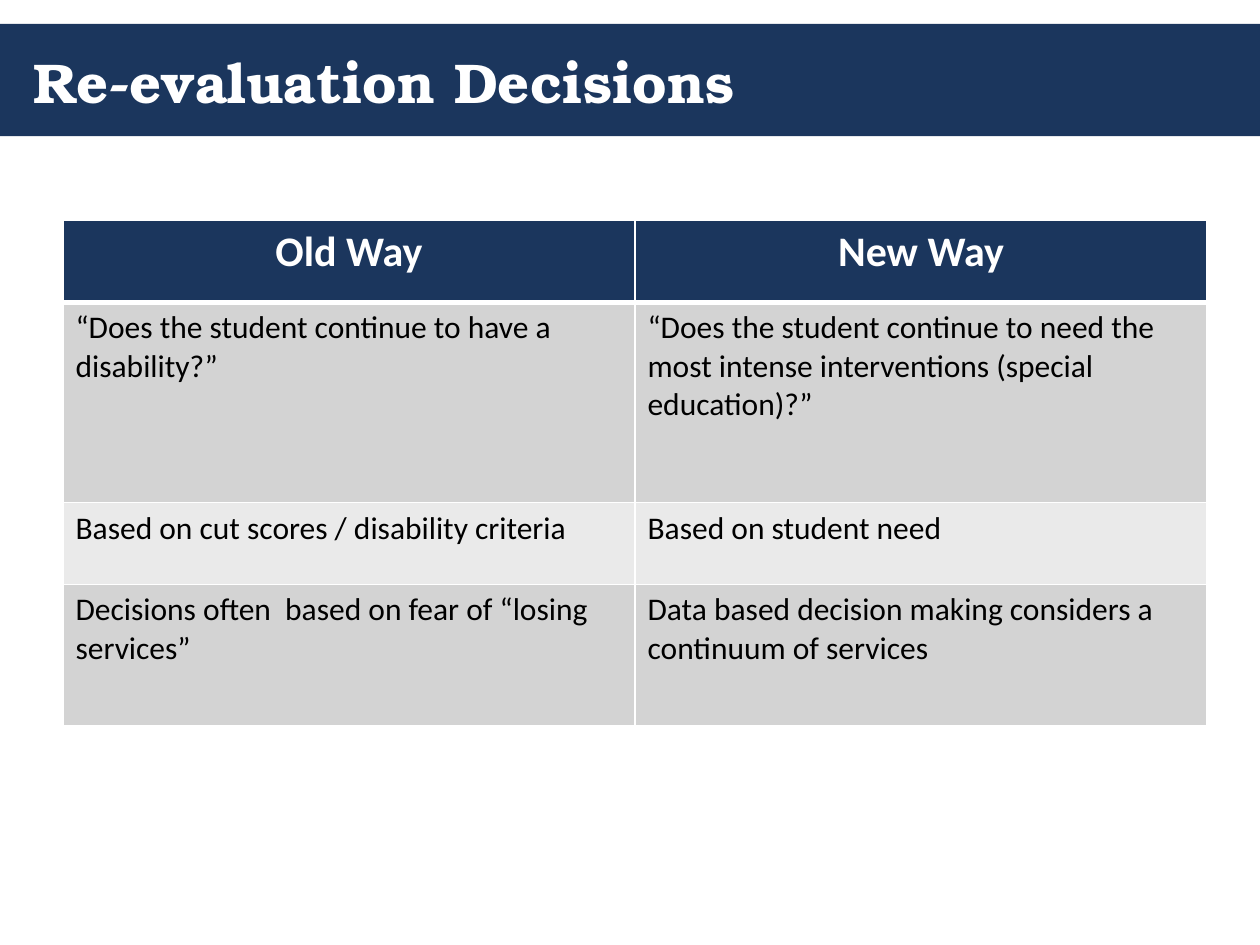
from lxml.etree import SubElement
from pptx import Presentation
from pptx.dml.color import RGBColor
from pptx.enum.shapes import MSO_SHAPE as Shape
from pptx.enum.text import MSO_ANCHOR as Anchor, PP_ALIGN as Align
from pptx.oxml.ns import qn
from pptx.util import Inches, Pt

NAVY, WHITE, BLACK = "1B365D", "FFFFFF", "000000"
BANDS = ["D3D3D3", "EAEAEA"]


def add_run(paragraph, text, font_name, size, color, bold):
    run = paragraph.add_run()
    run.text = text
    run.font.name = font_name
    run.font.size = Pt(size)
    run.font.bold = bold
    run.font.color.rgb = RGBColor.from_string(color)


def add_borders(cell, top, bottom):
    """Draw white cell borders; must run before the cell gets its fill."""
    properties = cell._tc.get_or_add_tcPr()
    for side, width in (("L", 1), ("R", 1), ("T", top), ("B", bottom)):
        line = SubElement(properties, qn(f"a:ln{side}"), w=str(Pt(width)))
        fill = SubElement(line, qn("a:solidFill"))
        SubElement(fill, qn("a:srgbClr"), val=WHITE)


presentation = Presentation()
presentation.slide_width = Inches(10)
presentation.slide_height = Inches(7.5)
slide = presentation.slides.add_slide(presentation.slide_layouts[6])

# Title band
band = slide.shapes.add_shape(
    Shape.RECTANGLE, 0, Inches(0.19), presentation.slide_width, Inches(0.89))
band.shadow.inherit = False
band.fill.solid()
band.fill.fore_color.rgb = RGBColor.from_string(NAVY)
band.line.fill.background()

title = slide.shapes.add_textbox(Inches(0.17), Inches(0.19), Inches(9.67), Inches(0.9))
title.text_frame.word_wrap = True
title.text_frame.vertical_anchor = Anchor.MIDDLE
add_run(title.text_frame.paragraphs[0], "Re-evaluation Decisions",
        "TeX Gyre Bonum", 32, WHITE, True)

# Comparison table
comparison = [
    ("Old Way", "New Way"),
    ("“Does the student continue to have a disability?”",
     "“Does the student continue to need the most intense interventions (special education)?”"),
    ("Based on cut scores / disability criteria", "Based on student need"),
    ("Decisions often  based on fear of “losing services”",
     "Data based decision making considers a continuum of services"),
]
row_heights = [0.65, 1.59, 0.65, 1.12]
column_width = 4.54

table = slide.shapes.add_table(
    len(comparison), 2, Inches(0.5), Inches(1.75),
    Inches(2 * column_width), Inches(sum(row_heights))).table
for column in table.columns:
    column.width = Inches(column_width)

for row_index, (texts, height) in enumerate(zip(comparison, row_heights)):
    table.rows[row_index].height = Inches(height)
    is_header = row_index == 0
    for column_index, text in enumerate(texts):
        cell = table.cell(row_index, column_index)
        add_borders(cell, 3 if row_index == 1 else 1, 3 if is_header else 1)
        cell.fill.solid()
        cell.fill.fore_color.rgb = RGBColor.from_string(
            NAVY if is_header else BANDS[(row_index - 1) % 2])
        paragraph = cell.text_frame.paragraphs[0]
        paragraph.alignment = Align.CENTER if is_header else Align.LEFT
        add_run(paragraph, text, "Calibri", 24 if is_header else 18,
                WHITE if is_header else BLACK, is_header)

presentation.save("out.pptx")
